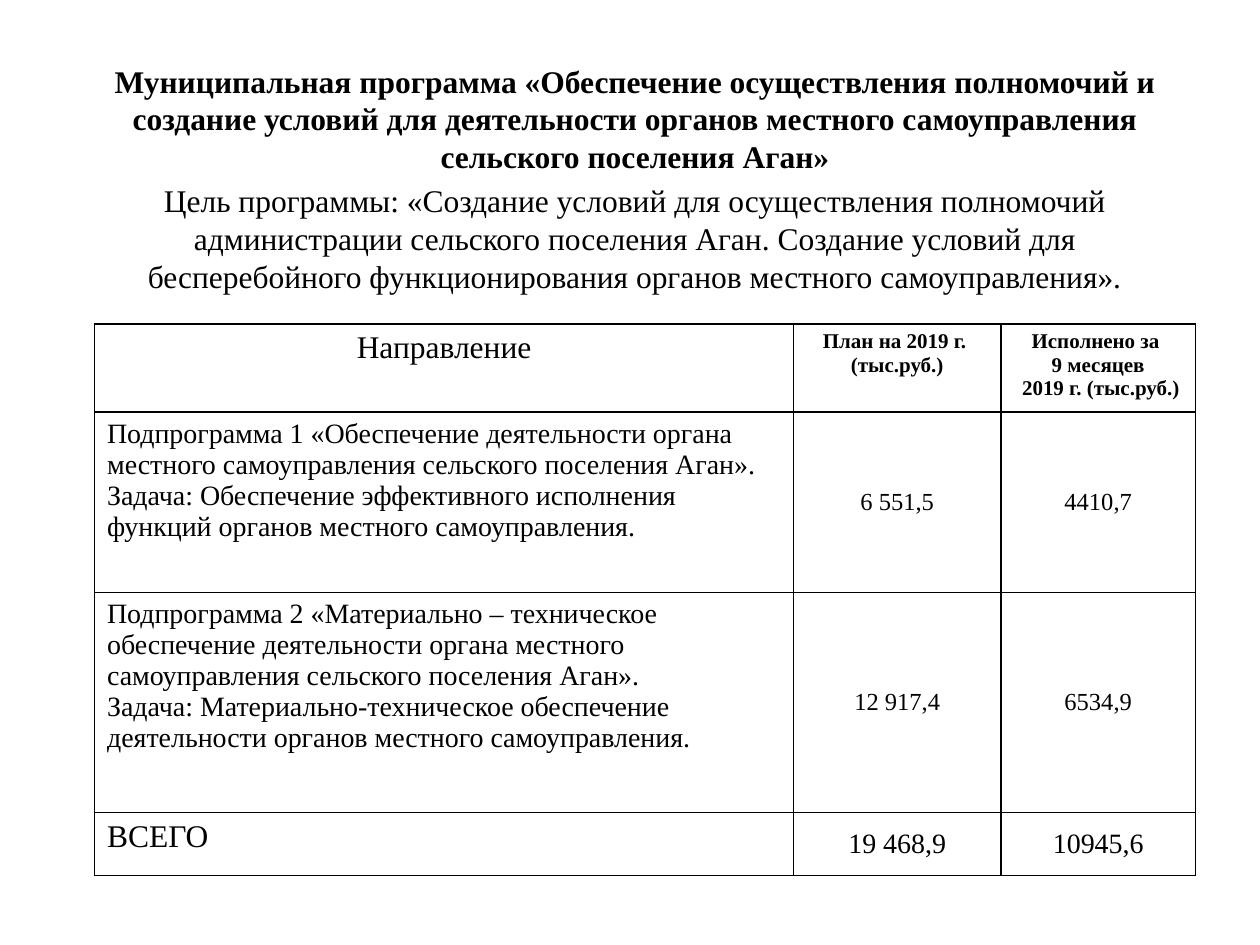
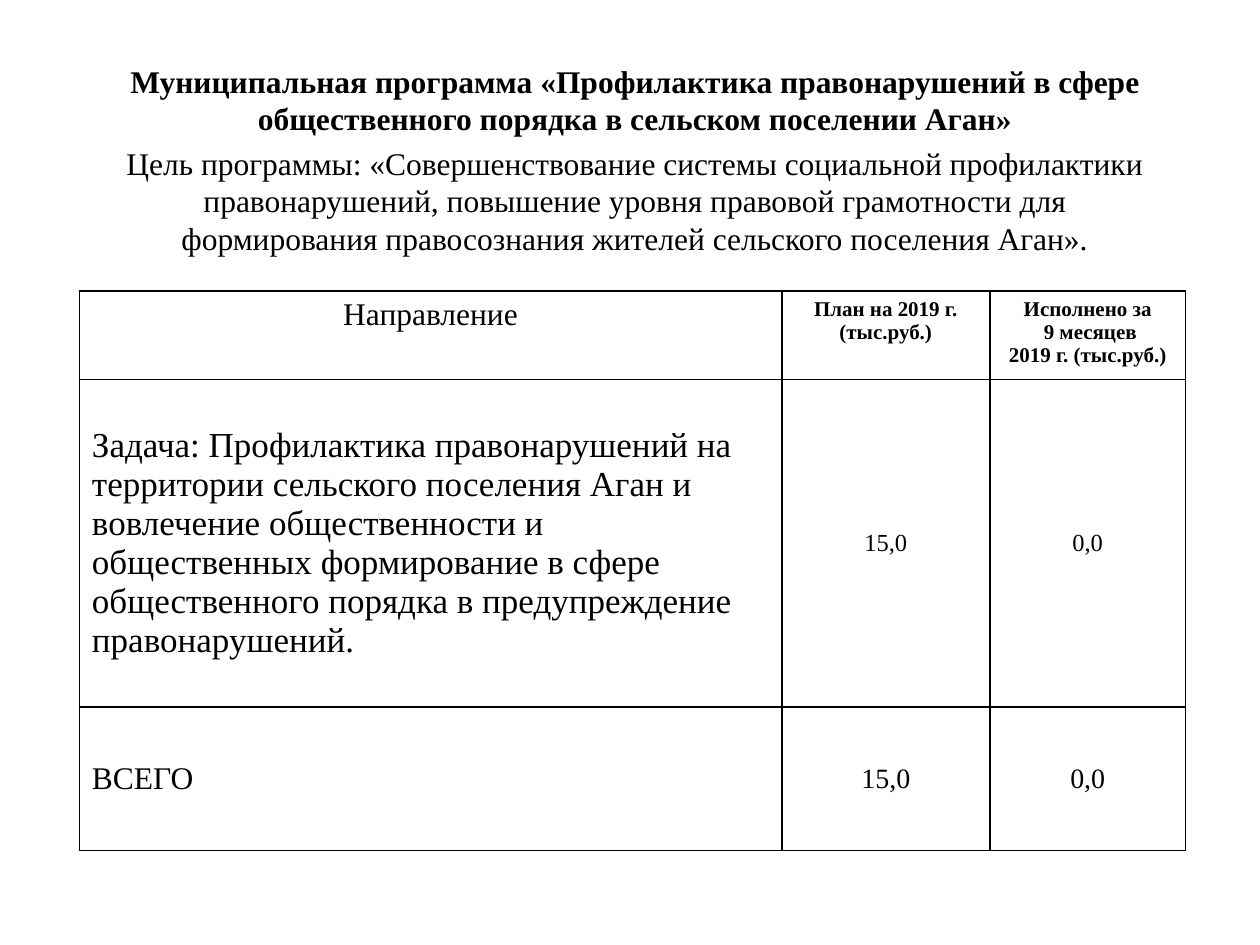
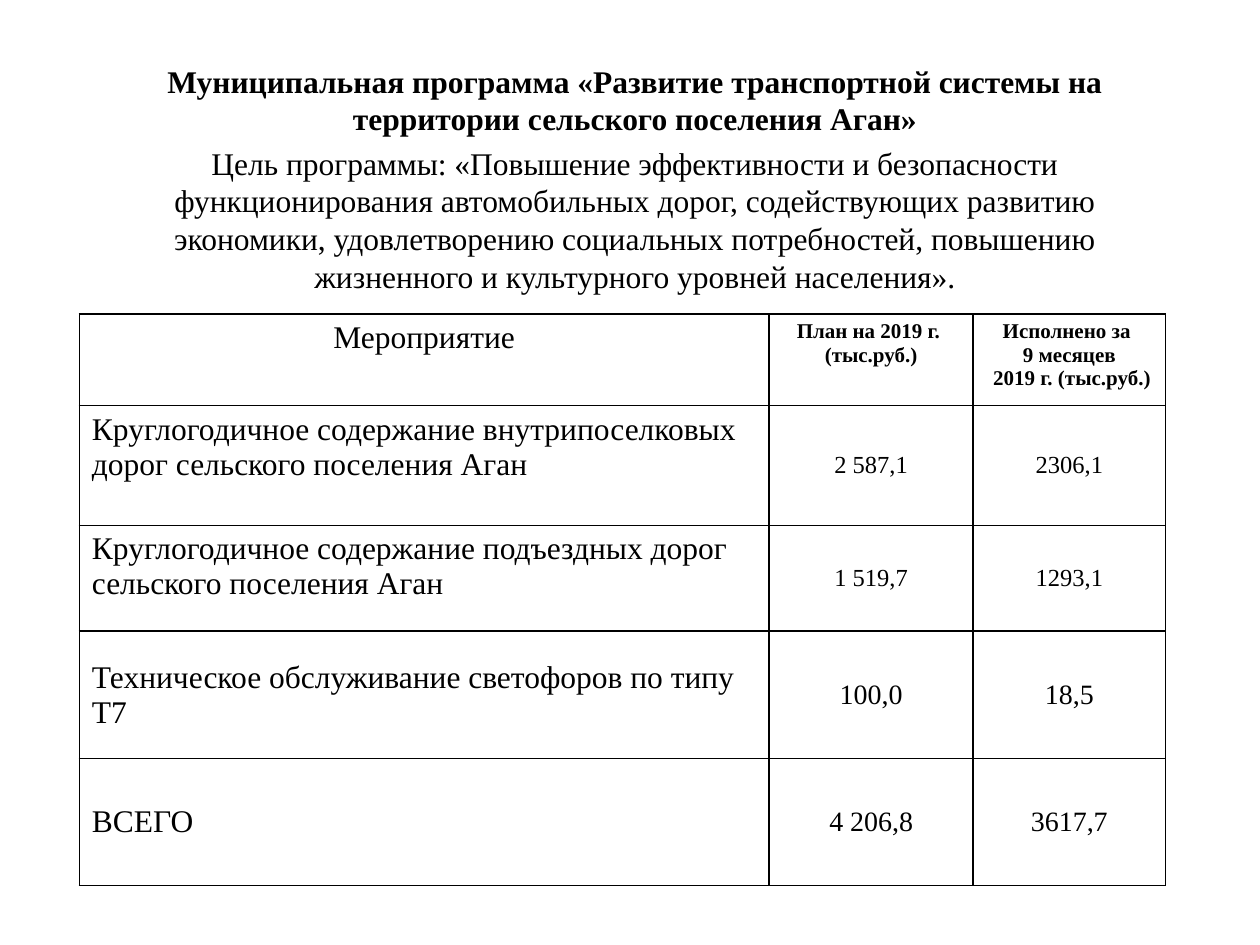
from dataclasses import dataclass

from lxml.etree import SubElement
from pptx import Presentation
from pptx.dml.color import RGBColor
from pptx.enum.text import MSO_ANCHOR, PP_ALIGN
from pptx.oxml.ns import qn
from pptx.util import Inches, Pt


@dataclass(frozen=True)
class Theme:
    font: str = "Times New Roman"
    ink: str = "000000"
    rule: float = 1
    title: int = 18
    head: int = 12
    large: int = 20
    body: int = 18
    small: int = 16
    value: int = 14
    total: int = 16
    lead: float = 1.0
    gap: float = 3.6


look = Theme()
TOP, MID = MSO_ANCHOR.TOP, MSO_ANCHOR.MIDDLE
LEFT, MIDST = PP_ALIGN.LEFT, PP_ALIGN.CENTER
SHARES = (0.635, 0.188, 0.177)
PLAN = ("План на 2019 г. ", "(тыс.руб.)")
DONE = ("Исполнено за ", "9 месяцев", " 2019 г. (тыс.руб.)")

# Row: height, label anchor, label size, value size, label lines, plan, done
pages = [
    dict(
        title="Муниципальная программа «Обеспечение осуществления полномочий и создание условий "
              "для деятельности органов местного самоуправления сельского поселения Аган»",
        goal="Цель программы: «Создание условий для осуществления полномочий администрации "
             "сельского поселения Аган. Создание условий для бесперебойного функционирования "
             "органов местного самоуправления».",
        left=0.75, top=2.57, width=8.74, high=4.38, tall=0.5,
        heads=(("Направление",), PLAN, DONE),
        rows=[
            (1.43, TOP, look.small, look.value,
             ("Подпрограмма 1 «Обеспечение деятельности органа местного самоуправления "
              "сельского поселения Аган».",
              "Задача: Обеспечение эффективного исполнения функций органов местного "
              "самоуправления."), "6 551,5", "4410,7"),
            (1.75, TOP, look.small, look.value,
             ("Подпрограмма 2 «Материально – техническое обеспечение деятельности органа "
              "местного самоуправления сельского поселения Аган».",
              "Задача: Материально-техническое обеспечение деятельности органов местного "
              "самоуправления."), "12 917,4", "6534,9"),
            (0.5, TOP, look.body, look.total, ("ВСЕГО",), "19 468,9", "10945,6"),
        ],
    ),
    dict(
        title="Муниципальная программа «Профилактика правонарушений в сфере общественного "
              "порядка в сельском поселении Аган»",
        goal="Цель программы: «Совершенствование системы социальной профилактики "
             "правонарушений, повышение уровня правовой грамотности для формирования "
             "правосознания жителей сельского поселения Аган».",
        left=0.63, top=2.31, width=8.78, high=4.44, tall=0.46,
        heads=(("Направление",), ("План на 2019 г. (тыс.руб.)",),
               ("Исполнено за", " 9 месяцев", "2019 г. (тыс.руб.)")),
        rows=[
            (2.6, MID, look.large, look.value,
             ("Задача: Профилактика правонарушений на территории сельского поселения Аган и "
              "вовлечение общественности и общественных формирование в сфере общественного "
              "порядка в предупреждение правонарушений.",), "15,0", "0,0"),
            (1.14, MID, look.body, look.total, ("ВСЕГО",), "15,0", "0,0"),
        ],
    ),
    dict(
        title="Муниципальная программа «Развитие транспортной системы на территории "
              "сельского поселения Аган»",
        goal="Цель программы: «Повышение эффективности и безопасности функционирования "
             "автомобильных дорог, содействующих развитию экономики, удовлетворению "
             "социальных потребностей, повышению жизненного и культурного уровней населения».",
        left=0.63, top=2.49, width=8.62, high=4.53, tall=0.73,
        heads=(("Мероприятие",), PLAN, DONE),
        rows=[
            (0.95, TOP, look.body, look.value,
             ("Круглогодичное содержание внутрипоселковых дорог сельского поселения Аган",),
             "2 587,1", "2306,1"),
            (0.84, TOP, look.body, look.value,
             ("Круглогодичное содержание подъездных дорог сельского поселения Аган",),
             "1 519,7", "1293,1"),
            (1.01, MID, look.body, look.total,
             ("Техническое обслуживание светофоров по типу Т7",), "100,0", "18,5"),
            (1.01, MID, look.body, look.total, ("ВСЕГО",), "4 206,8", "3617,7"),
        ],
    ),
]


def write(frame, lines, size, align, bold=False):
    """Put each line in its own paragraph and return the paragraphs."""
    for n, line in enumerate(lines):
        para = frame.paragraphs[0] if n == 0 else frame.add_paragraph()
        para.alignment = align
        run = para.add_run()
        run.text = line
        font = run.font
        font.name, font.size, font.bold = look.font, Pt(size), bold
        font.color.rgb = RGBColor.from_string(look.ink)
    return frame.paragraphs


def border(cell):
    props = cell._tc.get_or_add_tcPr()
    for n, side in enumerate(("a:lnL", "a:lnR", "a:lnT", "a:lnB")):
        line = props.makeelement(qn(side), {"w": str(Pt(look.rule))})
        fill = SubElement(line, qn("a:solidFill"))
        SubElement(fill, qn("a:srgbClr"), val=look.ink)
        props.insert(n, line)


deck = Presentation()
deck.slide_width, deck.slide_height = Inches(10), Inches(7.5)

for page in pages:
    slide = deck.slides.add_slide(deck.slide_layouts[6])

    box = slide.shapes.add_textbox(Inches(0.75), Inches(0.44), Inches(8.58), Inches(6.69))
    frame = box.text_frame
    frame.word_wrap = True
    paras = write(frame, (page["title"], page["goal"]), look.title, MIDST)
    paras[0].runs[0].font.bold = True
    paras[1].space_before = Pt(look.gap)
    for para in paras:
        para.line_spacing = look.lead

    rows = page["rows"]
    highs = [page["tall"]] + [row[0] for row in rows]
    grid = slide.shapes.add_table(
        len(highs), len(SHARES), Inches(page["left"]), Inches(page["top"]),
        Inches(page["width"]), Inches(page["high"]))
    table = grid.table
    table.first_row = table.horz_banding = False
    for col, share in zip(table.columns, SHARES):
        col.width = Inches(page["width"] * share)
    for row, high in zip(table.rows, highs):
        row.height = Inches(high)
    grid.height = Inches(page["high"])

    for n, lines in enumerate(page["heads"]):
        size = look.body if n == 0 else look.head
        write(table.cell(0, n).text_frame, lines, size, MIDST, bold=n > 0)

    for r, (high, anchor, size, num, label, *values) in enumerate(rows, 1):
        cell = table.cell(r, 0)
        cell.vertical_anchor = anchor
        write(cell.text_frame, label, size, LEFT)
        for c, value in enumerate(values, 1):
            cell = table.cell(r, c)
            cell.vertical_anchor = MID
            write(cell.text_frame, (value,), num, MIDST)

    for cell in table.iter_cells():
        cell.fill.background()
        border(cell)

deck.save("out.pptx")
